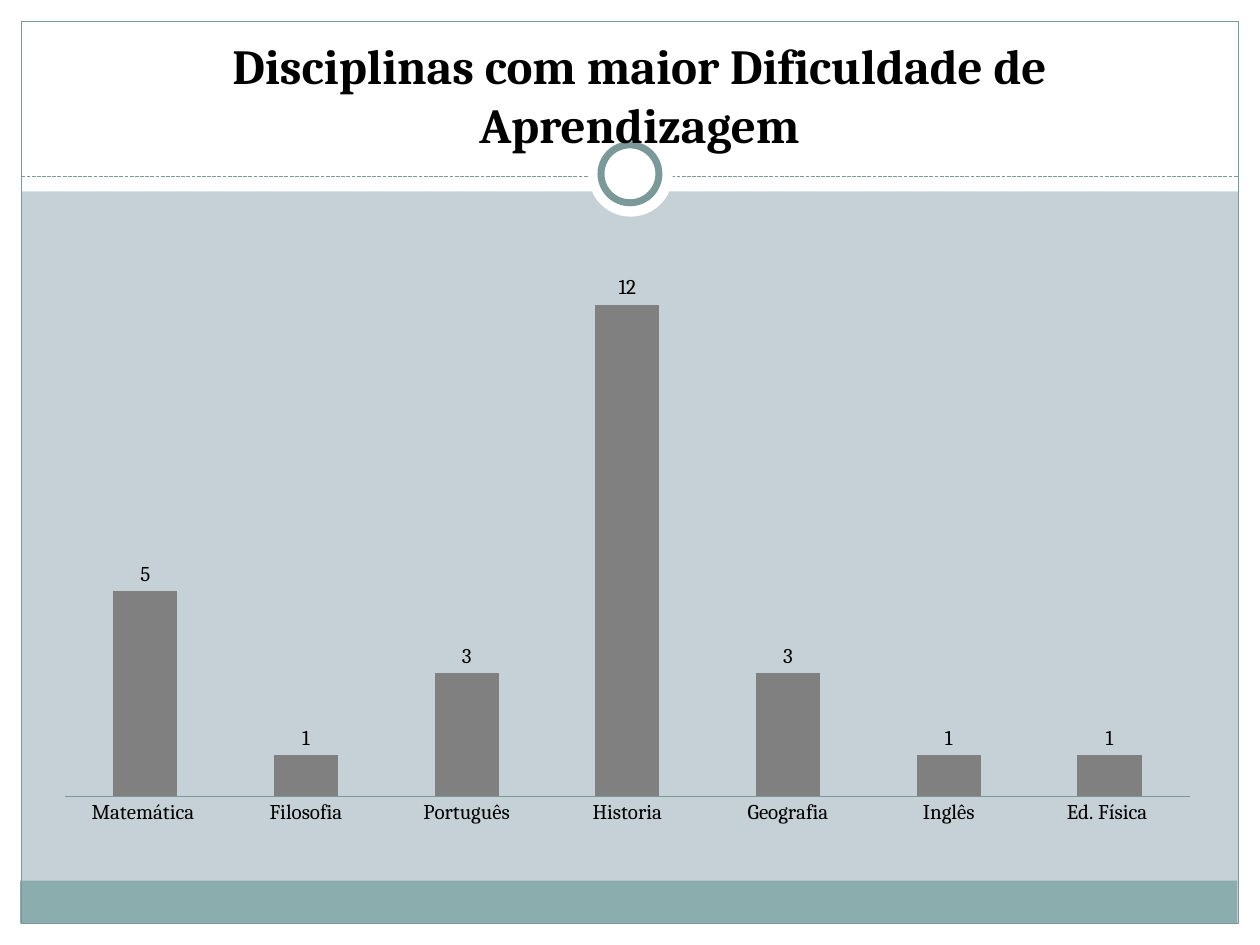
"""Build a slide with a column chart of the subjects pupils find hardest."""
from lxml import etree
from pptx import Presentation
from pptx import util as u
from pptx.chart.data import CategoryChartData
from pptx.dml.color import RGBColor
from pptx.enum import chart as ch, dml, shapes, text
from pptx.oxml import parse_xml
from pptx.oxml.ns import qn

FONT = "Cambria"
HUES = {"back": "C5D1D7", "white": "FFFFFF", "band": "8CADAE",
        "edge": "7C999A", "bar": "808080", "ink": "000000"}


def hue(name):
    return RGBColor.from_string(HUES[name])


def draw(kind, box, fill=None, line=None):
    item = slide.shapes.add_shape(kind, *map(u.Inches, box))
    item.shadow.inherit = False
    if fill:
        item.fill.solid()
        item.fill.fore_color.rgb = hue(fill)
    else:
        item.fill.background()
    if line:
        item.line.color.rgb = hue("edge")
        item.line.width = u.Pt(line)
    else:
        item.line.fill.background()


deck = Presentation()
deck.slide_width, deck.slide_height = u.Inches(10), u.Inches(7.5)
slide = deck.slides.add_slide(deck.slide_layouts[5])
slide.background.fill.solid()
slide.background.fill.fore_color.rgb = hue("back")

RECT, OVAL = shapes.MSO_SHAPE.RECTANGLE, shapes.MSO_SHAPE.OVAL
for box in [(0, 7.33, 10, 0.17), (0, 0, 10, 1.52),
            (0, 0, 0.17, 7.5), (9.83, 0, 0.17, 7.5)]:
    draw(RECT, box, "white")
draw(RECT, (0.16, 6.99, 9.66, 0.34), "band")
draw(RECT, (0.17, 0.17, 9.66, 7.16), line=0.75)

rule = slide.shapes.add_connector(
    shapes.MSO_CONNECTOR.STRAIGHT,
    u.Inches(0.17), u.Inches(1.4), u.Inches(9.83), u.Inches(1.4))
rule.line.color.rgb = hue("edge")
rule.line.width = u.Pt(0.75)
rule.line.dash_style = dml.MSO_LINE.SQUARE_DOT
etree.SubElement(rule._element.spPr, qn("a:effectLst"))

draw(OVAL, (4.67, 1.05, 0.67, 0.67), "white")
draw(OVAL, (4.77, 1.15, 0.46, 0.46), "white", 4)

data = CategoryChartData()
data.categories = ["Matemática ", "Filosofia", "Português", "Historia",
                   "Geografia", "Inglês", "Ed. Física "]
data.add_series("Series 1", (5, 1, 3, 12, 3, 1, 1))
chart = slide.shapes.add_chart(
    ch.XL_CHART_TYPE.COLUMN_CLUSTERED, u.Inches(0.33), u.Inches(1.67),
    u.Inches(9.3), u.Inches(5), data).chart
chart.has_legend = False
chart.has_title = False
chart.font.name = FONT
chart.font.size = u.Pt(10)
chart.font.color.rgb = hue("ink")

plot = chart.plots[0]
plot.gap_width, plot.overlap = 150, -25
plot.vary_by_categories = False
bars = plot.series[0]
bars.format.fill.solid()
bars.format.fill.fore_color.rgb = hue("bar")
tags = bars.data_labels
tags.show_value = True
tags.position = ch.XL_LABEL_POSITION.OUTSIDE_END
cats = chart.category_axis
cats.major_tick_mark = ch.XL_TICK_MARK.NONE
cats.format.line.color.rgb = hue("edge")
cats.format.line.width = u.Pt(0.75)
for font in (tags.font, cats.tick_labels.font):
    font.name = FONT
    font.size = u.Pt(12)
    font.color.rgb = hue("ink")
vals = chart.value_axis
vals.minimum_scale, vals.maximum_scale = 0, 14
vals.has_major_gridlines = False
vals.visible = False

area = chart._chartSpace.chart.plotArea
for old in area.findall(qn("c:layout")):
    area.remove(old)
spots = {"layoutTarget": "inner", "xMode": "edge", "yMode": "edge",
         "x": 0.02, "y": 0.02, "w": 0.96, "h": 0.91}
marks = "".join(f'<c:{key} val="{val}"/>' for key, val in spots.items())
area.insert(0, parse_xml(
    '<c:layout xmlns:c="http://schemas.openxmlformats.org/drawingml/2006/chart">'
    f"<c:manualLayout>{marks}</c:manualLayout></c:layout>"))

title = slide.shapes.title
title.left, title.top = u.Inches(1.48), u.Inches(0.23)
title.width, title.height = u.Inches(7.19), u.Inches(1.04)
frame = title.text_frame
frame.word_wrap = True
frame.auto_size = text.MSO_AUTO_SIZE.SHAPE_TO_FIT_TEXT
frame.vertical_anchor = text.MSO_ANCHOR.MIDDLE
para = frame.paragraphs[0]
para.alignment = text.PP_ALIGN.CENTER
run = para.add_run()
run.text = "Disciplinas com maior Dificuldade de Aprendizagem"
run.font.name, run.font.size, run.font.bold = FONT, u.Pt(28), True
run.font.color.rgb = hue("ink")
slide.shapes._spTree.append(title._element)

deck.save("out.pptx")
